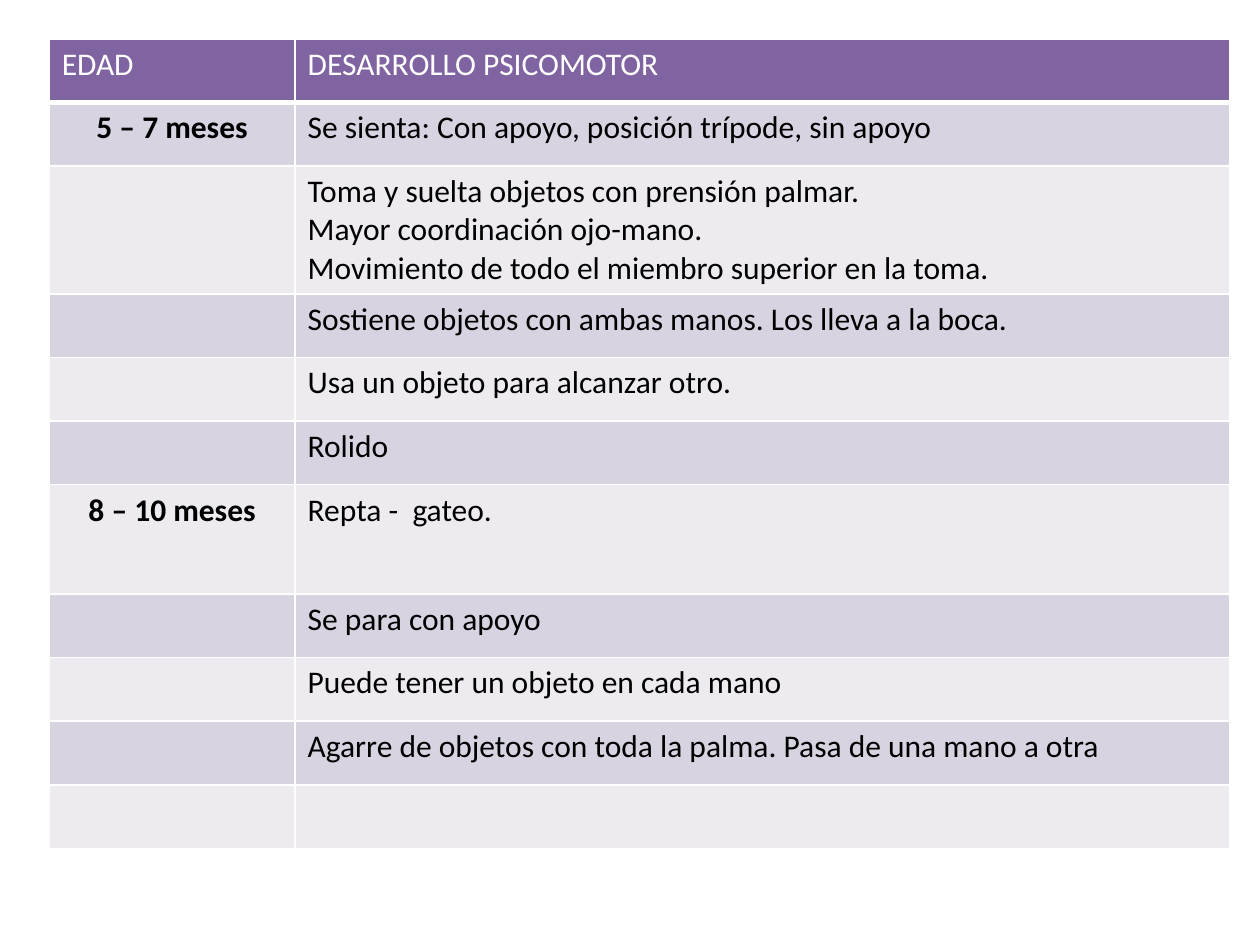
from pptx import Presentation
from pptx.dml.color import RGBColor
from pptx.enum.text import PP_ALIGN as Align
from pptx.oxml.ns import qn
from pptx.util import Inches, Pt
from lxml.etree import SubElement

PURPLE = RGBColor(0x80, 0x64, 0xA2)
LILAC = RGBColor(0xD8, 0xD3, 0xE0)
PALE_LILAC = RGBColor(0xED, 0xEA, 0xF0)
WHITE = RGBColor(0xFF, 0xFF, 0xFF)
BLACK = RGBColor(0, 0, 0)

FONT, FONT_SIZE = "Calibri", Pt(18)
COLUMN_SHARES = (5, 19)

# Row height in units, age, milestone
ROWS = [
    (1, "EDAD", "DESARROLLO PSICOMOTOR"),
    (1, "5 – 7 meses", "Se sienta: Con apoyo, posición trípode, sin apoyo"),
    (2, "", "Toma y suelta objetos con prensión palmar.\n"
            "Mayor coordinación ojo-mano.\n"
            "Movimiento de todo el miembro superior en la toma."),
    (1, "", "Sostiene objetos con ambas manos. Los lleva a la boca."),
    (1, "", "Usa un objeto para alcanzar otro."),
    (1, "", "Rolido"),
    (1.72, "8 – 10 meses", "Repta -  gateo."),
    (1, "", "Se para con apoyo"),
    (1, "", "Puede tener un objeto en cada mano"),
    (1, "", "Agarre de objetos con toda la palma. Pasa de una mano a otra"),
    (1, "", ""),
]


def set_borders(cell, bottom_width):
    """Draw white borders, 1 pt except for the given bottom width."""
    properties = cell._tc.get_or_add_tcPr()
    widths = {"a:lnL": 1, "a:lnR": 1, "a:lnT": 1, "a:lnB": bottom_width}
    for tag, width in widths.items():
        line = SubElement(properties, qn(tag), w=str(Pt(width)))
        fill = SubElement(line, qn("a:solidFill"))
        SubElement(fill, qn("a:srgbClr"), val=str(WHITE))


def style_cell(cell, text, fill, color, is_age):
    """Fill one cell; an age is bold and centred."""
    cell.text_frame.text = text
    for paragraph in cell.text_frame.paragraphs:
        paragraph.alignment = Align.CENTER if is_age else Align.LEFT
        for run in paragraph.runs:
            run.font.name, run.font.size = FONT, FONT_SIZE
            run.font.bold = is_age
            run.font.color.rgb = color
    cell.fill.solid()
    cell.fill.fore_color.rgb = fill


def add_milestone_table(slide, left, top, width, height):
    frame = slide.shapes.add_table(len(ROWS), len(COLUMN_SHARES), left, top, width, height)
    table = frame.table
    for column, share in zip(table.columns, COLUMN_SHARES):
        column.width = int(width * share / sum(COLUMN_SHARES))

    total_units = sum(units for units, *_ in ROWS)
    for row_index, (units, *texts) in enumerate(ROWS):
        table.rows[row_index].height = int(height * units / total_units)
        is_header = row_index == 0
        band = LILAC if row_index % 2 else PALE_LILAC
        for column_index, text in enumerate(texts):
            cell = table.cell(row_index, column_index)
            # Borders precede the fill in the cell properties
            set_borders(cell, bottom_width=3 if is_header else 1)
            style_cell(cell, text,
                       fill=PURPLE if is_header else band,
                       color=WHITE if is_header else BLACK,
                       is_age=column_index == 0 and not is_header)


def main():
    presentation = Presentation()
    presentation.slide_width, presentation.slide_height = Inches(10), Inches(7.5)
    slide = presentation.slides.add_slide(presentation.slide_layouts[6])
    add_milestone_table(slide, Inches(0.39), Inches(0.31), Inches(9.37), Inches(6.42))
    presentation.save("out.pptx")


if __name__ == "__main__":
    main()
